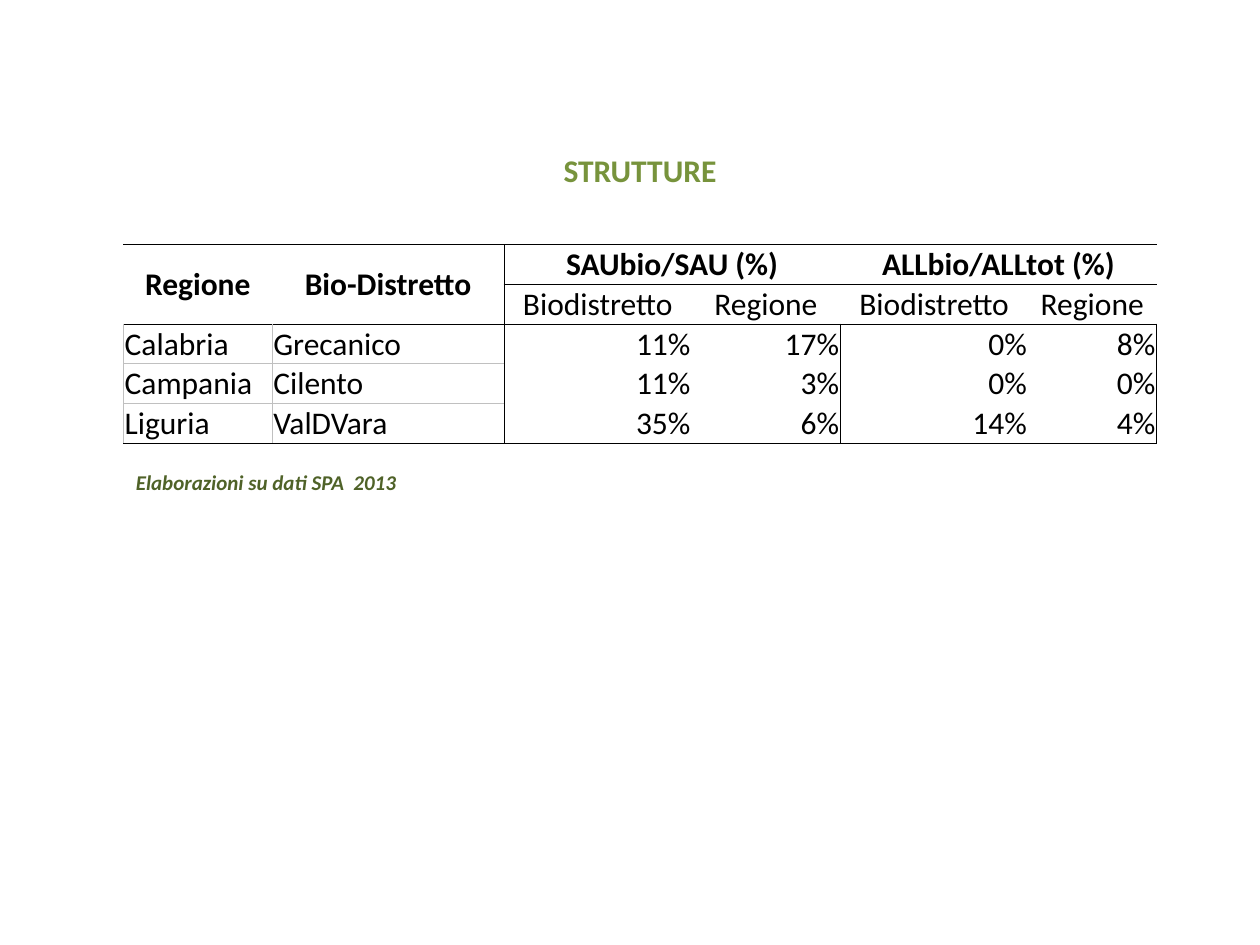
import pptx
import pptx.dml.color
import pptx.enum.text
import pptx.oxml
import pptx.oxml.ns
import pptx.util

Inches, Pt = pptx.util.Inches, pptx.util.Pt
RGBColor = pptx.dml.color.RGBColor
ALIGN, ANCHOR = pptx.enum.text.PP_ALIGN, pptx.enum.text.MSO_ANCHOR

BLACK = RGBColor(0x00, 0x00, 0x00)
GREY = RGBColor(0xC0, 0xC0, 0xC0)
GREEN = RGBColor(0x77, 0x93, 0x3C)
DARK_GREEN = RGBColor(0x4F, 0x62, 0x28)

COLUMN_WIDTHS = [1.18, 1.84, 1.49, 1.18, 1.49, 1.02]
ROW_HEIGHT = 0.31
HEADER_ROWS, LABEL_COLUMNS = 2, 2
ROWS = [
    ["Regione", "Bio-Distretto", "SAUbio/SAU (%)", "", "ALLbio/ALLtot (%)", ""],
    ["", "", "Biodistretto", "Regione", "Biodistretto", "Regione"],
    ["Calabria", "Grecanico", "11%", "17%", "0%", "8%"],
    ["Campania", "Cilento", "11%", "3%", "0%", "0%"],
    ["Liguria", "ValDVara", "35%", "6%", "14%", "4%"],
]
# Each merge joins the cells from the first (row, column) to the second
MERGES = [((0, 0), (1, 0)), ((0, 1), (1, 1)), ((0, 2), (0, 3)), ((0, 4), (0, 5))]


def rule_above(row, col):
    """Colour of the horizontal rule on top of a cell, or None."""
    if row <= HEADER_ROWS or row == len(ROWS):
        return BLACK
    return GREY if col < LABEL_COLUMNS else None


def rule_before(row, col):
    """Colour of the vertical rule left of a cell, or None."""
    if col == LABEL_COLUMNS:
        return BLACK
    if row < HEADER_ROWS:
        return None
    if col < LABEL_COLUMNS:
        return GREY
    return BLACK if col in (4, 6) else None


class SlideBuilder:
    font = {"name": "Calibri", "size": Pt(18), "bold": False, "italic": False}

    def __init__(self, slide):
        self.slide = slide

    def add_text(self, tf, text, align, color, **font):
        p = tf.paragraphs[0]
        p.alignment = align
        r = p.add_run()
        r.text = text
        for name, value in {**self.font, **font}.items():
            setattr(r.font, name, value)
        r.font.color.rgb = color

    def title(self, text, left, top, width, height):
        sp = self.slide.shapes.title
        sp.left, sp.top, sp.width, sp.height = map(Inches, (left, top, width, height))
        self.add_text(sp.text_frame, text, ALIGN.CENTER, GREEN, bold=True)

    def note(self, text, left, top, width, height):
        sp = self.slide.shapes.add_textbox(*map(Inches, (left, top, width, height)))
        sp.text_frame.word_wrap = True
        self.add_text(sp.text_frame, text, ALIGN.LEFT, DARK_GREEN,
                      size=Pt(12), bold=True, italic=True)

    def border(self, cell, side, color):
        ns = pptx.oxml.ns.nsdecls("a")
        fill = "<a:noFill/>"
        if color is not None:
            fill = f'<a:solidFill><a:srgbClr val="{color}"/></a:solidFill>'
        line = f'<a:ln{side} {ns} w="{Pt(0.5)}">{fill}</a:ln{side}>'
        cell._tc.get_or_add_tcPr().append(pptx.oxml.parse_xml(line))

    def cell(self, cell, row, col, text):
        borders = {
            "L": rule_before(row, col),
            "R": rule_before(row, col + 1),
            "T": rule_above(row, col),
            "B": rule_above(row + 1, col),
        }
        for side, color in borders.items():
            self.border(cell, side, color)
        cell.fill.background()
        layout = {
            "margin_left": Inches(0.01),
            "margin_right": Inches(0.01),
            "margin_top": Inches(0.01),
            "margin_bottom": 0,
            "vertical_anchor": ANCHOR.MIDDLE if row == 0 else ANCHOR.BOTTOM,
        }
        for name, value in layout.items():
            setattr(cell, name, value)
        if row < HEADER_ROWS:
            align = ALIGN.CENTER
        else:
            align = ALIGN.LEFT if col < LABEL_COLUMNS else ALIGN.RIGHT
        self.add_text(cell.text_frame, text, align, BLACK, bold=row == 0)

    def table(self, left, top):
        size = sum(COLUMN_WIDTHS), ROW_HEIGHT * len(ROWS)
        table = self.slide.shapes.add_table(
            len(ROWS), len(COLUMN_WIDTHS), *map(Inches, (left, top, *size))).table
        table.first_row = table.horz_banding = False
        for column, width in zip(table.columns, COLUMN_WIDTHS):
            column.width = Inches(width)
        for first, last in MERGES:
            table.cell(*first).merge(table.cell(*last))
        for row, texts in enumerate(ROWS):
            table.rows[row].height = Inches(ROW_HEIGHT)
            for col, text in enumerate(texts):
                cell = table.cell(row, col)
                if not cell.is_spanned:
                    self.cell(cell, row, col, text)


def main():
    prs = pptx.Presentation()
    prs.slide_width, prs.slide_height = Inches(10), Inches(7.5)
    title_only = prs.slide_layouts[5]
    s = SlideBuilder(prs.slides.add_slide(title_only))
    s.table(0.98, 1.94)
    s.title("STRUTTURE", 2.56, 1.15, 5.04, 0.4)
    s.note("Elaborazioni su dati SPA  2013", 0.98, 3.68, 3.7, 0.3)
    prs.save("out.pptx")


if __name__ == "__main__":
    main()
